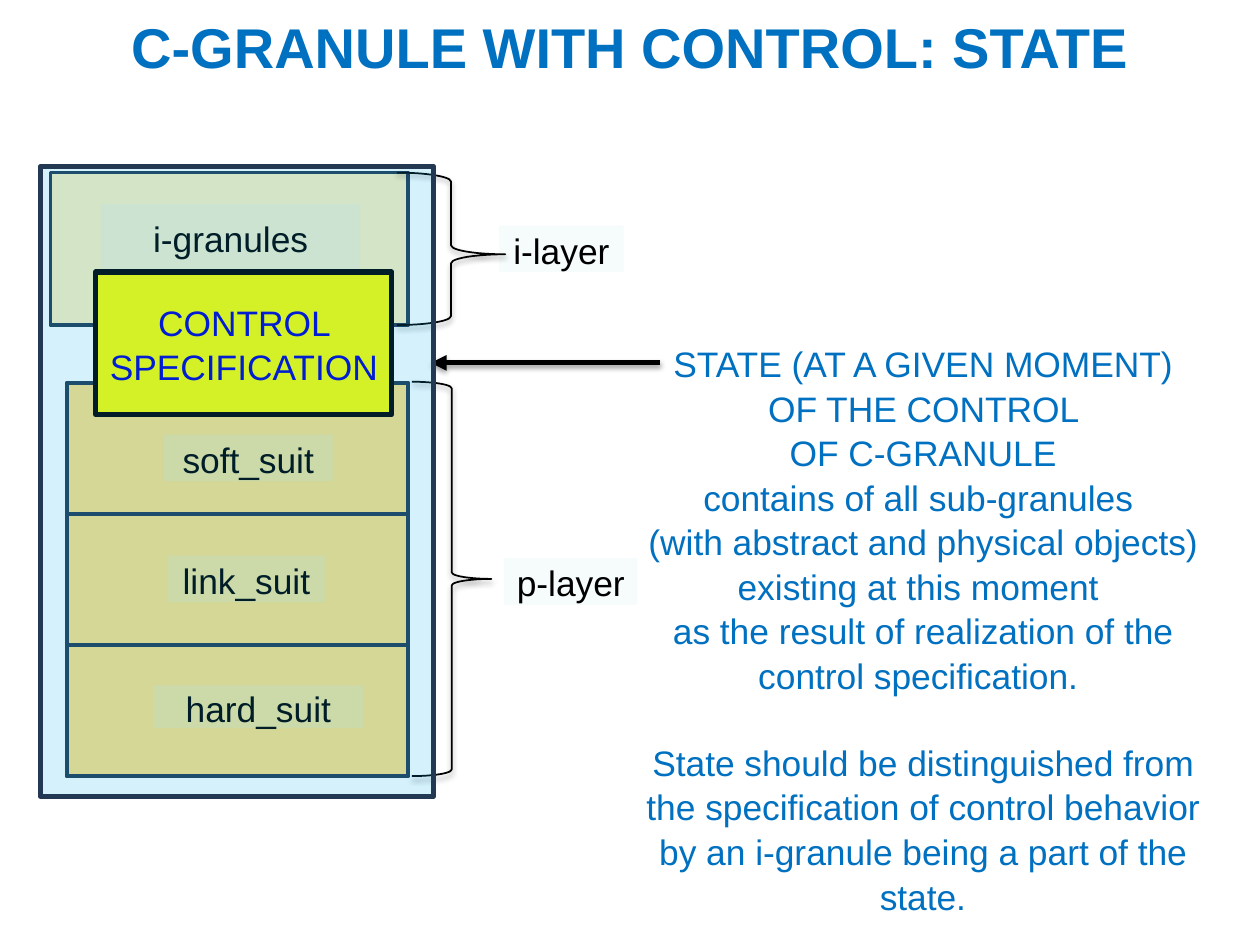
from lxml import etree
from pptx import Presentation
from pptx.dml.color import RGBColor
from pptx.enum.shapes import MSO_CONNECTOR, MSO_SHAPE
from pptx.enum.text import MSO_ANCHOR, PP_ALIGN
from pptx.oxml.ns import qn
from pptx.util import Inches, Pt

RECT, BRACE = MSO_SHAPE.RECTANGLE, MSO_SHAPE.RIGHT_BRACE
TOP, MIDDLE = MSO_ANCHOR.TOP, MSO_ANCHOR.MIDDLE
CENTER = PP_ALIGN.CENTER
FONT, SIZE, LINE_PITCH = "Arial", 20.2, 1.05

COLORS = {
    "black": "000000", "blue": "0070C0", "control_text": "0000CC",
    "amber": "FFC000", "yellow": "FFFF00", "sky": "00B0F0",
    "label": "DBEEF4", "navy": "233953",
}

TITLE = "C-GRANULE WITH CONTROL: STATE"
STATE_TEXT = [
    "STATE (AT A GIVEN MOMENT)",
    " OF THE CONTROL ",
    "OF C-GRANULE",
    "contains of all sub-granules ",
    "(with abstract and physical objects) existing at this moment ",
    "as the result of realization of the control specification. ",
    "State should be distinguished from the specification of control "
    "behavior by an i-granule being a part of the state.",
]
LABELS = [
    ("p-layer", (4, 4.43, 1.06, 0.37)),
    ("i-granules", (0.8, 1.62, 2.06, 0.53)),
    ("i-layer", (3.96, 1.79, 0.99, 0.37)),
    ("link_suit", (1.33, 4.41, 1.25, 0.37)),
    ("soft_suit", (1.3, 3.45, 1.34, 0.37)),
    ("hard_suit", (1.22, 5.44, 1.66, 0.34)),
]
BRACES = [
    ((3.27, 3.03, 0.63, 3.13), 0.5),
    ((3.15, 1.37, 0.86, 1.21), 0.536),
]
SUIT_LEFT, SUIT_TOP, SUIT_WIDTH, SUIT_HEIGHT, SUIT_COUNT = 0.53, 3.04, 2.71, 1.04, 3


def rgb(name):
    return RGBColor.from_string(COLORS[name])


def add_alpha(color, percent):
    etree.SubElement(color, qn("a:alpha"), val=str(percent * 1000))


def add_drop_shadow(effects):
    shadow = etree.SubElement(effects, qn("a:outerShdw"), blurRad=str(Pt(3.1)),
                              dist=str(Pt(1.6)), dir="5400000", rotWithShape="0")
    color = etree.SubElement(shadow, qn("a:srgbClr"), val=COLORS["black"])
    add_alpha(color, 38)


def add_box(slide, at, kind=RECT, fill=None, alpha=None, line=None, width=2):
    sp = slide.shapes.add_shape(kind, *map(Inches, at))
    sp.shadow.inherit = False
    if fill:
        sp.fill.solid()
        sp.fill.fore_color.rgb = rgb(fill)
        if alpha:
            add_alpha(sp.element.spPr.find(qn("a:solidFill"))[0], alpha)
    else:
        sp.fill.background()
    if line:
        sp.line.color.rgb = rgb(line)
        sp.line.width = Pt(width)
    else:
        sp.line.fill.background()
    return sp


def write_text(sp, *paragraphs, color="black", size=SIZE, bold=False,
               anchor=MIDDLE, wrap=True, pitch=LINE_PITCH):
    tf = sp.text_frame
    tf.word_wrap = wrap
    tf.vertical_anchor = anchor
    for i, text in enumerate(paragraphs):
        p = tf.add_paragraph() if i else tf.paragraphs[0]
        p.alignment = CENTER
        p.line_spacing = pitch
        r = p.add_run()
        r.text = text
        r.font.name, r.font.size, r.font.bold = FONT, Pt(size), bold
        r.font.color.rgb = rgb(color)
    return tf


def add_arrow(slide, start, end):
    line = slide.shapes.add_connector(MSO_CONNECTOR.STRAIGHT,
                                      *map(Inches, start + end))
    line.line.color.rgb = rgb("black")
    line.line.width = Pt(3)
    sp_pr = line.element.spPr
    etree.SubElement(sp_pr.find(qn("a:ln")), qn("a:tailEnd"), type="triangle")
    add_drop_shadow(etree.SubElement(sp_pr, qn("a:effectLst")))


def main():
    prs = Presentation()
    prs.slide_width, prs.slide_height = Inches(10), Inches(7.5)
    slide = prs.slides.add_slide(prs.slide_layouts[6])

    suits = [(SUIT_LEFT, SUIT_TOP + i * SUIT_HEIGHT, SUIT_WIDTH, SUIT_HEIGHT)
             for i in range(SUIT_COUNT)]
    p_layer = (SUIT_LEFT, SUIT_TOP, SUIT_WIDTH, SUIT_COUNT * SUIT_HEIGHT)
    for at in [p_layer] + suits:
        add_box(slide, at, fill="amber", alpha=28, line="navy")
    add_box(slide, (0.4, 1.37, 2.84, 1.21), fill="amber", alpha=25, line="navy")

    for text, at in LABELS:
        write_text(add_box(slide, at, fill="label", alpha=23), text, wrap=False)

    for at, tip in BRACES:
        brace = add_box(slide, at, kind=BRACE, line="black", width=1)
        brace.adjustments[0], brace.adjustments[1] = 0.083, tip
        add_drop_shadow(brace.element.spPr.find(qn("a:effectLst")))

    state = slide.shapes.add_textbox(*map(Inches, (5, 2.65, 4.65, 4.53)))
    tf = write_text(state, *STATE_TEXT, color="blue", anchor=TOP)
    tf.paragraphs[-1].space_before = Pt(24.3)

    control = add_box(slide, (0.76, 2.16, 2.35, 1.13), fill="yellow",
                      line="black", width=3)
    tf = write_text(control, "CONTROL SPECIFICATION", color="control_text")
    tf.margin_left = tf.margin_right = Inches(0.07)
    tf.margin_top = tf.margin_bottom = Inches(0.04)

    add_arrow(slide, (5.24, 2.88), (3.42, 2.88))

    title = slide.shapes.add_textbox(0, 0, prs.slide_width, Inches(0.55))
    tf = write_text(title, TITLE, color="blue", size=32, bold=True,
                    anchor=TOP, pitch=1)
    tf.margin_top = Inches(0.1)

    add_box(slide, (0.32, 1.32, 3.12, 5), fill="sky", alpha=17,
            line="navy", width=3)
    prs.save("out.pptx")


if __name__ == "__main__":
    main()
